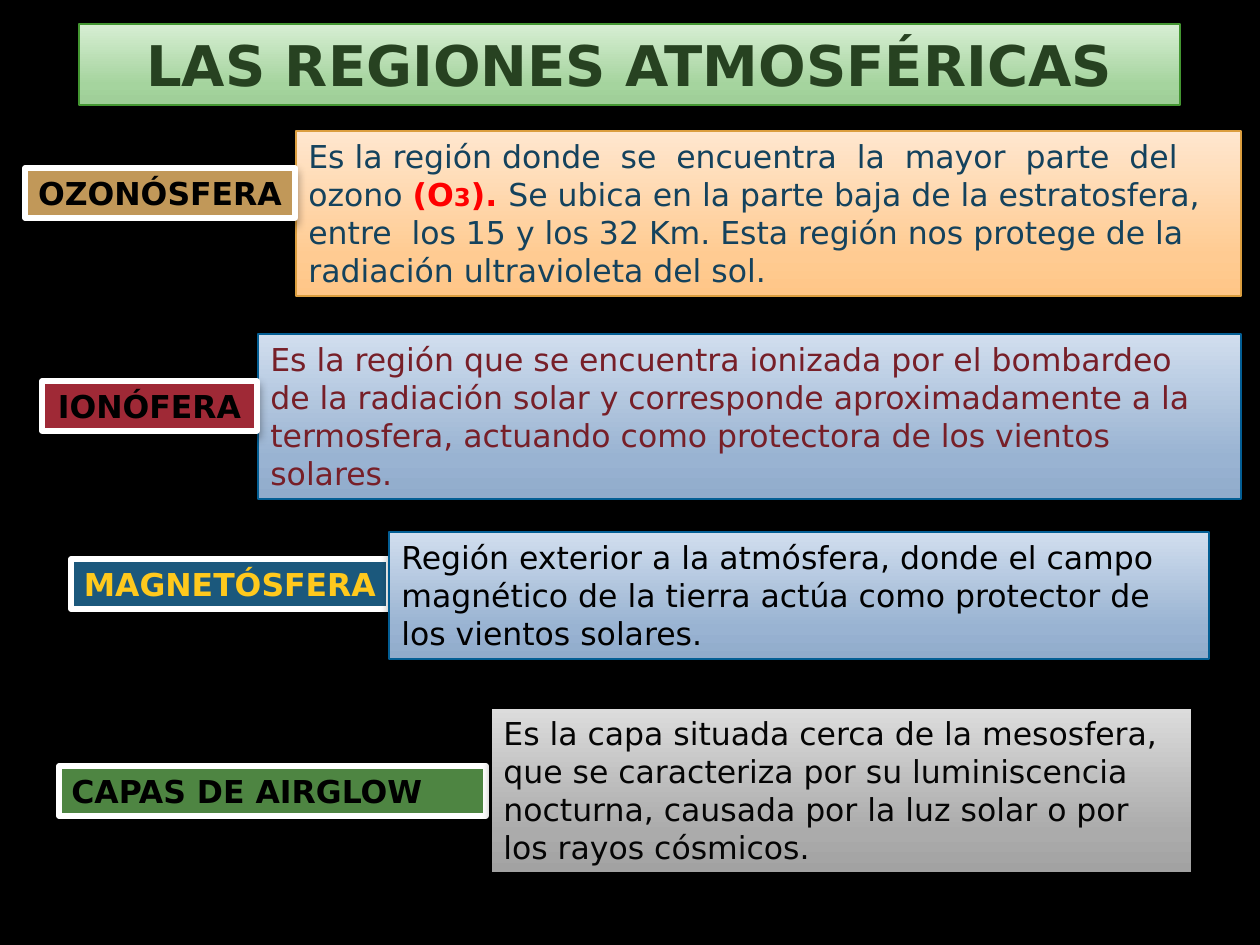
"""Build the slide on the atmospheric regions: a title and four labelled descriptions."""
from copy import deepcopy

from pptx import Presentation
from pptx.dml.color import RGBColor
from pptx.enum.shapes import MSO_SHAPE
from pptx.enum.text import MSO_ANCHOR, MSO_AUTO_SIZE, PP_ALIGN
from pptx.oxml import parse_xml
from pptx.oxml.ns import nsdecls, qn
from pptx.util import Emu, Pt

SCALE = 914400 / 126
FONT = "DejaVu Sans"
SHADOW = (
    f'<a:effectLst {nsdecls("a")}><a:outerShdw blurRad="65500" dist="38100" dir="5400000" '
    'rotWithShape="0"><a:srgbClr val="000000"><a:alpha val="40000"/></a:srgbClr>'
    "</a:outerShdw></a:effectLst>"
)
BLUE = ("90ABCB", "99B3D2", "D1DEEE")


def rgb(value):
    return RGBColor.from_string(value)


def add_box(frame, colors, border, border_width, paragraphs, ink, size=18, bold=None,
            align=PP_ALIGN.LEFT, wrap=True):
    """Add a shadowed box, solid for one colour and graded from the bottom up for three."""
    box = slide.shapes.add_shape(MSO_SHAPE.RECTANGLE, *(Emu(round(px * SCALE)) for px in frame))
    if len(colors) == 1:
        box.fill.solid()
        box.fill.fore_color.rgb = rgb(colors[0])
    else:
        box.fill.gradient()
        box.fill.gradient_angle = 90
        stop_list = box._element.spPr.find(qn("a:gradFill")).find(qn("a:gsLst"))
        stop_list.append(deepcopy(stop_list[0]))
        for stop, position, color in zip(box.fill.gradient_stops, (0, 0.25, 1), colors):
            stop.position = position
            stop.color.rgb = rgb(color)
    box.line.color.rgb = rgb(border)
    box.line.width = Pt(border_width)
    box._element.spPr.append(parse_xml(SHADOW))

    text = box.text_frame
    text.word_wrap = wrap
    text.auto_size = MSO_AUTO_SIZE.SHAPE_TO_FIT_TEXT
    text.vertical_anchor = MSO_ANCHOR.TOP
    for index, runs in enumerate(paragraphs):
        paragraph = text.paragraphs[0] if index == 0 else text.add_paragraph()
        paragraph.alignment = align
        paragraph.font.name = FONT
        for words, *accent in runs:
            run = paragraph.add_run()
            run.text = words
            run_ink, run_size, run_bold = accent or (ink, size, bold)
            run.font.color.rgb = rgb(run_ink)
            run.font.size = Pt(run_size)
            run.font.bold = run_bold
            run.font.name = FONT


prs = Presentation()
prs.slide_width = Emu(round(1260 * SCALE))
prs.slide_height = Emu(round(945 * SCALE))
slide = prs.slides.add_slide(prs.slide_layouts[6])
slide.background.fill.solid()
slide.background.fill.fore_color.rgb = rgb("000000")

add_box((79, 24, 1101, 81), ("9DCD96", "A5D49E", "D7EED3"), "439631", 0.75,
        [[("LAS REGIONES ATMOSFÉRICAS",)]], "274221", 32, True, PP_ALIGN.CENTER)

descriptions = [
    ((296, 131, 945, 165), ("FFC687", "FFCB92", "FFE7CF"), "DB9E3F", "14425D", [[
        ("Es la región donde  se  encuentra  la  mayor  parte  del  ozono ",),
        ("(O", "FF0000", 18, True),
        ("3", "FF0000", 14, True),
        ("). ", "FF0000", 18, True),
        ("Se ubica en la parte baja de la estratosfera, entre  los 15 y los 32 Km. "
         "Esta región nos protege de la radiación ultravioleta del sol.",),
    ]]),
    ((258, 334, 983, 165), BLUE, "035E94", "771F28", [
        [("Es la región que se encuentra ionizada por el bombardeo",)],
        [("de la radiación solar y corresponde aproximadamente a la termosfera, "
          "actuando como protectora de los vientos solares.",)],
    ]),
    ((389, 532, 820, 127), BLUE, "035E94", "000000", [
        [("Región exterior a la atmósfera, donde el campo magnético de la tierra "
          "actúa como protector de",)],
        [("los vientos solares.",)],
    ]),
    ((491, 708, 701, 165), ("A2A2A2", "ABABAB", "DCDCDC"), "000000", "050505", [[
        ("Es la capa situada cerca de la mesosfera, que se caracteriza por su luminiscencia "
         "nocturna, causada por la luz solar o por los rayos cósmicos.",),
    ]]),
]
labels = [
    ((25, 168, 270, 50), "C19859", "OZONÓSFERA", "000000", PP_ALIGN.CENTER, False),
    ((42, 381, 215, 50), "9F2936", "IONÓFERA", "000000", PP_ALIGN.CENTER, False),
    ((71, 559, 318, 50), "1B587C", "MAGNETÓSFERA", "FFC91D", PP_ALIGN.CENTER, False),
    ((59, 766, 427, 50), "4E8542", "CAPAS DE AIRGLOW", "000000", PP_ALIGN.LEFT, True),
]

for frame, color, name, ink, align, wrap in labels[2:]:
    add_box(frame, (color,), "FFFFFF", 3, [[(name,)]], ink, 18, True, align, wrap)
for frame, colors, border, ink, paragraphs in descriptions:
    add_box(frame, colors, border, 0.75, paragraphs, ink)
for frame, color, name, ink, align, wrap in labels[:2]:
    add_box(frame, (color,), "FFFFFF", 3, [[(name,)]], ink, 18, True, align, wrap)

prs.save("out.pptx")
